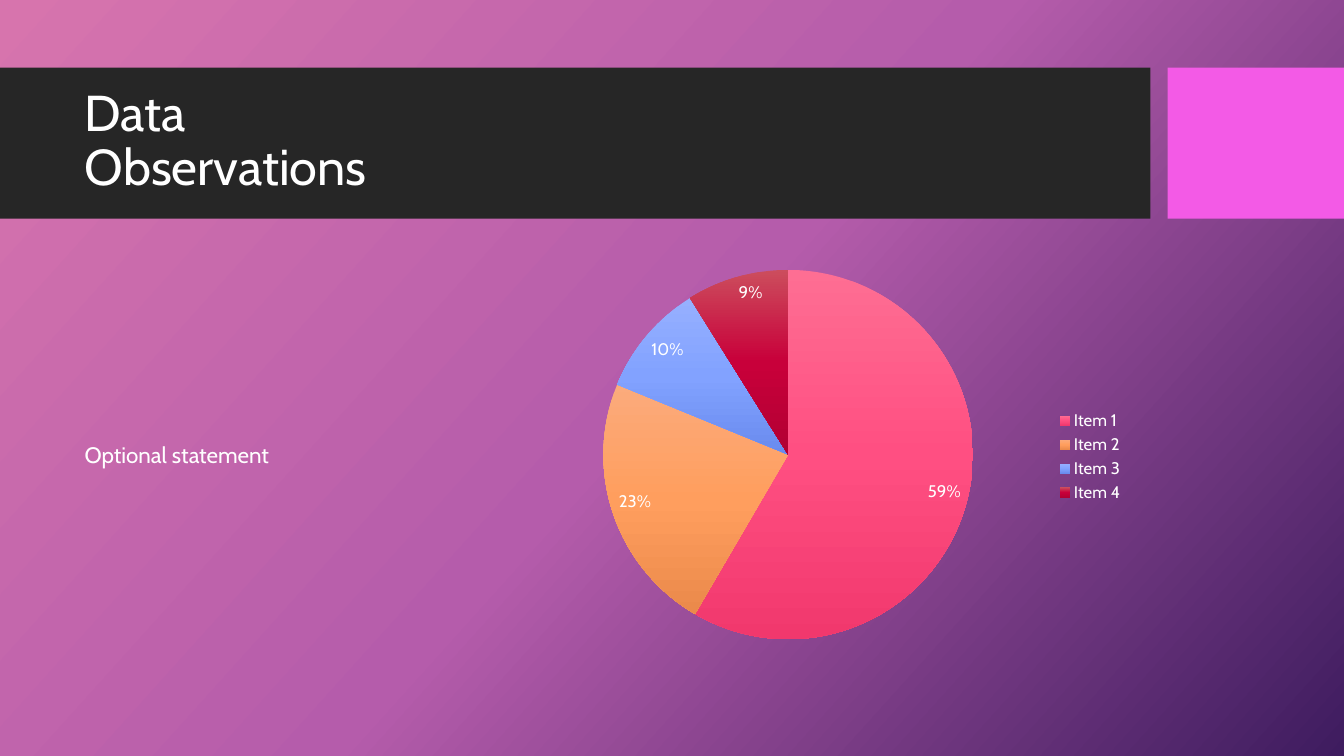
from copy import deepcopy

from lxml.etree import SubElement
from pptx import Presentation
from pptx.chart.data import CategoryChartData
from pptx.dml.color import RGBColor
from pptx.enum.chart import XL_CHART_TYPE, XL_LABEL_POSITION, XL_LEGEND_POSITION
from pptx.enum.shapes import MSO_SHAPE
from pptx.enum.text import MSO_ANCHOR, MSO_AUTO_SIZE, PP_ALIGN
from pptx.oxml.ns import qn
from pptx.util import Inches, Pt

COLORS = {"text": "FFFFFF", "band": "262626", "accent": "F35AE6"}
BACKGROUND = ["D774AD", "B55CAB", "3E1C5F"]
ITEMS = {
    "Item 1": (59, ["FE6E93", "FF4F82", "F1386D"]),
    "Item 2": (23, ["FBAB7C", "FF9E5E", "EB8A4B"]),
    "Item 3": (10, ["96B0FF", "82A2FF", "698BEE"]),
    "Item 4": (9, ["CC4D5D", "C8003A", "B20033"]),
}
PIE_LAYOUT = {"x": 0.14, "y": 0.03, "w": 0.6, "h": 0.93}


def format_font(font, size, color=COLORS["text"], name="Cabin"):
    """Apply size, color and typeface to a font."""
    font.size = Pt(size)
    font.name = name
    font.color.rgb = RGBColor.from_string(color)


def write_text(frame, text, size, align=PP_ALIGN.LEFT, line_spacing=0.9):
    """Write one unbulleted paragraph, breaking it at each line of the text."""
    frame.word_wrap = True
    frame.auto_size = MSO_AUTO_SIZE.NONE
    frame.vertical_anchor = MSO_ANCHOR.MIDDLE
    paragraph = frame.paragraphs[0]
    properties = paragraph._p.get_or_add_pPr()
    properties.set("marL", "0")
    properties.set("indent", "0")
    SubElement(properties, qn("a:buNone"))
    paragraph.alignment = align
    paragraph.line_spacing = line_spacing
    paragraph.space_before = Pt(0)
    for number, line in enumerate(text.splitlines()):
        if number:
            paragraph.add_line_break()
        run = paragraph.add_run()
        run.text = line
        format_font(run.font, size)


def fill_gradient(fill, owner, colors, angle):
    """Fill with three evenly spaced colors at a clockwise angle."""
    fill.gradient()
    stops = owner.find(".//" + qn("a:gsLst"))
    stops.append(deepcopy(stops[-1]))
    for number, (stop, color) in enumerate(zip(fill.gradient_stops, colors)):
        stop.position = number / 2
        stop.color.rgb = RGBColor.from_string(color)
    fill.gradient_angle = 360 - angle


class SlideBuilder:
    """Holds the current slide and adds styled elements to it."""

    def __init__(self, presentation):
        self.slide = presentation.slides.add_slide(presentation.slide_layouts[1])

    def background(self, colors, angle):
        """Set the slide's gradient background."""
        fill_gradient(self.slide.background.fill, self.slide.element, colors, angle)

    def rectangle(self, left, top, width, height, color):
        """Add a plain filled rectangle."""
        shape = self.slide.shapes.add_shape(
            MSO_SHAPE.RECTANGLE, Inches(left), Inches(top), Inches(width), Inches(height)
        )
        shape.shadow.inherit = False
        shape.fill.solid()
        shape.fill.fore_color.rgb = RGBColor.from_string(COLORS[color])
        shape.line.fill.background()

    def placeholder(self, index, left, top, width, height, text, size):
        """Move a placeholder to the front, place it and write its text."""
        shape = self.slide.placeholders[index]
        self.slide.shapes.element.append(shape.element)
        shape.left, shape.top = Inches(left), Inches(top)
        shape.width, shape.height = Inches(width), Inches(height)
        write_text(shape.text_frame, text, size)

    def pie(self, left, top, width, height, items):
        """Add a pie chart with gradient slices, labels and a legend."""
        data = CategoryChartData()
        data.categories = list(items)
        data.add_series("Series 1", [value for value, _ in items.values()])
        chart = self.slide.shapes.add_chart(
            XL_CHART_TYPE.PIE, Inches(left), Inches(top), Inches(width), Inches(height), data
        ).chart
        format_font(chart.font, 10)
        chart.has_title = False
        chart.has_legend = True
        chart.legend.position = XL_LEGEND_POSITION.RIGHT
        chart.legend.include_in_layout = False
        format_font(chart.legend.font, 12)

        plot = chart.plots[0]
        plot.vary_by_categories = True
        series = plot.series[0]
        for number, (_, colors) in enumerate(items.values()):
            slice_format = series.points[number].format
            slice_format.line.fill.background()
            owner = series._element.findall(qn("c:dPt"))[number]
            fill_gradient(slice_format.fill, owner, colors, 90)

        plot.has_data_labels = True
        labels = plot.data_labels
        labels.show_value = True
        labels.number_format = '0"%"'
        labels.number_format_is_linked = False
        labels.position = XL_LABEL_POSITION.INSIDE_END
        format_font(labels.font, 12)
        self.plot_layout(chart)

    def plot_layout(self, chart):
        """Fix the pie's place within the chart."""
        area = chart.element.find(".//" + qn("c:plotArea"))
        layout = area.find(qn("c:layout"))
        if layout is None:
            layout = SubElement(area, qn("c:layout"))
            area.insert(0, layout)
        manual = SubElement(layout, qn("c:manualLayout"))
        settings = {"layoutTarget": "inner", "xMode": "edge", "yMode": "edge", **PIE_LAYOUT}
        for name, value in settings.items():
            SubElement(manual, qn(f"c:{name}")).set("val", str(value))


def main():
    """Build and save the presentation."""
    presentation = Presentation()
    presentation.slide_width = Inches(13.33)
    presentation.slide_height = Inches(7.5)
    builder = SlideBuilder(presentation)
    builder.background(BACKGROUND, 42)
    builder.rectangle(0, 0.67, 11.41, 1.5, "band")
    builder.rectangle(11.58, 0.67, 1.75, 1.5, "accent")
    builder.placeholder(0, 0.74, 0.82, 10.51, 1.18, "Data\nObservations", 36)
    builder.pie(5.12, 2.56, 6.13, 3.94, ITEMS)
    builder.placeholder(1, 0.74, 2.56, 4.14, 3.94, "Optional statement", 16)
    presentation.save("out.pptx")


if __name__ == "__main__":
    main()
